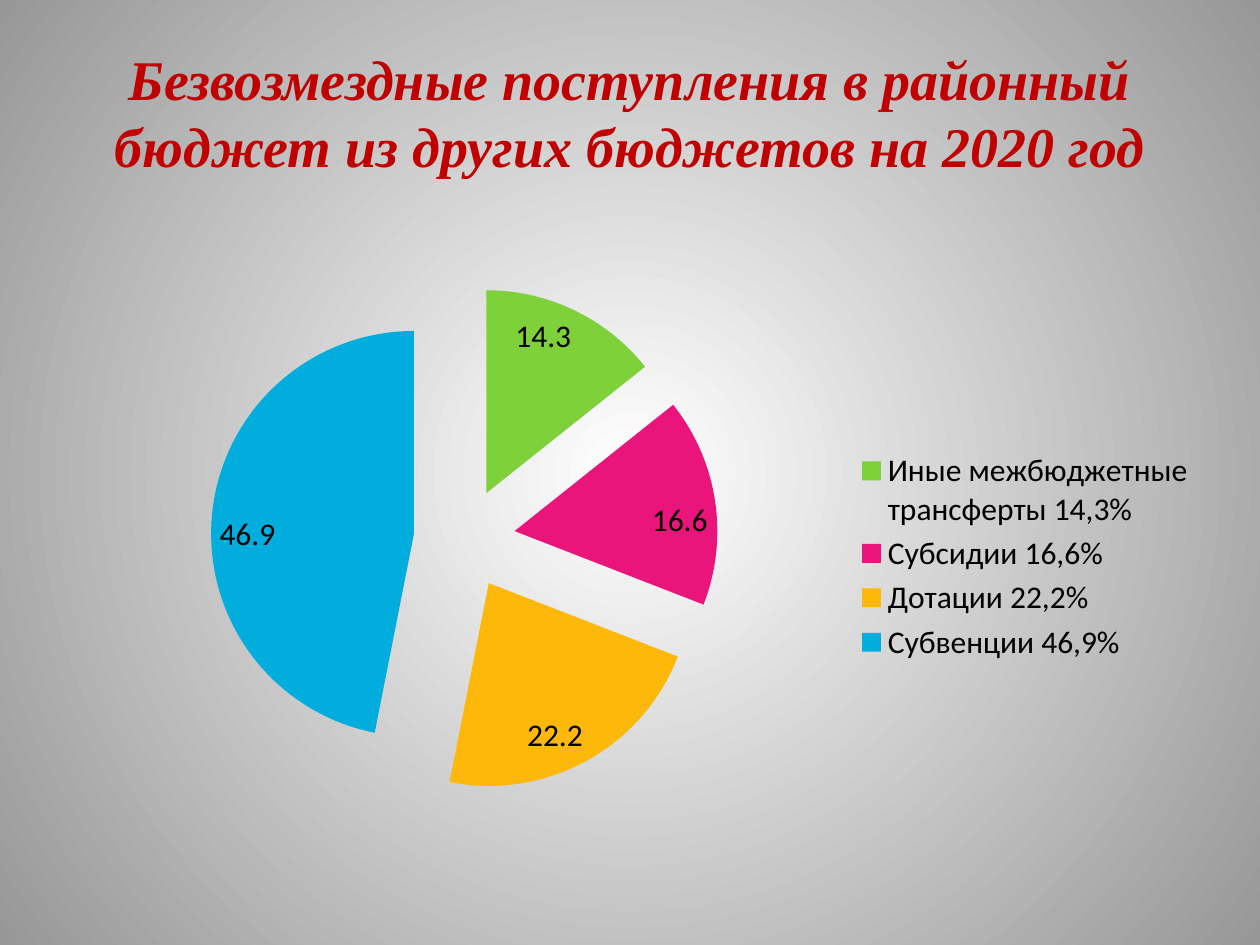
from dataclasses import dataclass

from lxml import etree
from pptx import Presentation
from pptx.chart.data import CategoryChartData
from pptx.dml.color import RGBColor
from pptx.enum.chart import XL_CHART_TYPE, XL_LABEL_POSITION, XL_LEGEND_POSITION
from pptx.enum.text import MSO_ANCHOR, PP_ALIGN
from pptx.oxml import parse_xml
from pptx.oxml.ns import nsdecls, qn
from pptx.util import Inches, Pt

PIE = XL_CHART_TYPE.PIE_EXPLODED
INSIDE_END = XL_LABEL_POSITION.INSIDE_END
LEGEND_RIGHT = XL_LEGEND_POSITION.RIGHT
MIDDLE = MSO_ANCHOR.MIDDLE
CENTER = PP_ALIGN.CENTER

WIDTH, HEIGHT = Inches(10), Inches(7.5)
TITLE = "Безвозмездные поступления в районный бюджет из других бюджетов на 2020 год"
TITLE_FONT = {"name": "Times New Roman", "size": Pt(32), "bold": True, "italic": True}
CHART_FONT = {"name": "Calibri", "size": Pt(18)}
EXPLOSION = 25


@dataclass(frozen=True)
class Area:
    left: float
    top: float
    width: float
    height: float

    def on_slide(self) -> tuple[int, int, int, int]:
        return (
            int(self.left * WIDTH),
            int(self.top * HEIGHT),
            int(self.width * WIDTH),
            int(self.height * HEIGHT),
        )


@dataclass(frozen=True)
class Slice:
    name: str
    value: float
    color: str


TITLE_AREA = Area(0.05, 0.04, 0.9, 0.156)
CHART_AREA = Area(0.059, 0.259, 0.9, 0.66)
PLOT_AREA = Area(0.06, 0.065, 0.568, 0.813)
SLICES = [
    Slice("Иные межбюджетные трансферты 14,3%", 14.3, "7FD13B"),
    Slice("Субсидии 16,6%", 16.6, "EA157A"),
    Slice("Дотации 22,2%", 22.2, "FEB80A"),
    Slice("Субвенции 46,9%", 46.9, "00ADDC"),
]


def rgb(color: str) -> RGBColor:
    return RGBColor.from_string(color)


def format_font(font, values: dict, color: str) -> None:
    for name, value in values.items():
        setattr(font, name, value)
    font.color.rgb = rgb(color)


def paint_background(page, center: str, edge: str) -> None:
    fill = page.background.fill
    fill.gradient()
    for stop, position, color in zip(fill.gradient_stops, (0, 1), (center, edge)):
        stop.position = position
        stop.color.rgb = rgb(color)
    linear = page.element.find(".//" + qn("a:lin"))
    linear.getparent().replace(linear, parse_xml(
        f'<a:path {nsdecls("a")} path="circle">'
        '<a:fillToRect l="50000" t="50000" r="50000" b="50000"/></a:path>'
    ))


def add_title(page, text: str, area: Area) -> None:
    frame = page.shapes.add_textbox(*area.on_slide()).text_frame
    frame.word_wrap = True
    frame.vertical_anchor = MIDDLE
    para = frame.paragraphs[0]
    para.alignment = CENTER
    span = para.add_run()
    span.text = text
    format_font(span.font, TITLE_FONT, "C00000")


def place_plot(chart, area: Area) -> None:
    plot_area = chart.element.find(".//" + qn("c:plotArea"))
    for old in plot_area.findall(qn("c:layout")):
        plot_area.remove(old)
    layout = etree.Element(qn("c:layout"))
    manual = etree.SubElement(layout, qn("c:manualLayout"))
    settings = {
        "layoutTarget": "inner", "xMode": "edge", "yMode": "edge",
        "x": area.left, "y": area.top, "w": area.width, "h": area.height,
    }
    for name, value in settings.items():
        etree.SubElement(manual, qn(f"c:{name}")).set("val", str(value))
    plot_area.insert(0, layout)


def explode(series, percent: int) -> None:
    for old in series._element.findall(qn("c:explosion")):
        series._element.remove(old)
    explosion = etree.Element(qn("c:explosion"))
    explosion.set("val", str(percent))
    series._element.find(qn("c:tx")).addnext(explosion)


def add_pie(page, slices: list[Slice], area: Area) -> None:
    data = CategoryChartData()
    data.categories = [part.name for part in slices]
    data.add_series("Series 1", [part.value for part in slices])
    chart = page.shapes.add_chart(PIE, *area.on_slide(), data).chart
    format_font(chart.font, CHART_FONT, "000000")
    chart.has_title = False
    chart.has_legend = True
    chart.legend.position = LEGEND_RIGHT
    chart.legend.include_in_layout = False
    place_plot(chart, PLOT_AREA)

    plot = chart.plots[0]
    plot.vary_by_categories = True
    plot.has_data_labels = True
    plot.data_labels.show_value = True
    plot.data_labels.show_percentage = False
    plot.data_labels.position = INSIDE_END
    series = plot.series[0]
    explode(series, EXPLOSION)
    for index, part in enumerate(slices):
        fill = series.points[index].format.fill
        fill.solid()
        fill.fore_color.rgb = rgb(part.color)


def main() -> None:
    deck = Presentation()
    deck.slide_width, deck.slide_height = WIDTH, HEIGHT
    page = deck.slides.add_slide(deck.slide_layouts[6])
    paint_background(page, "FFFFFF", "979797")
    add_title(page, TITLE, TITLE_AREA)
    add_pie(page, SLICES, CHART_AREA)
    deck.save("out.pptx")


if __name__ == "__main__":
    main()
